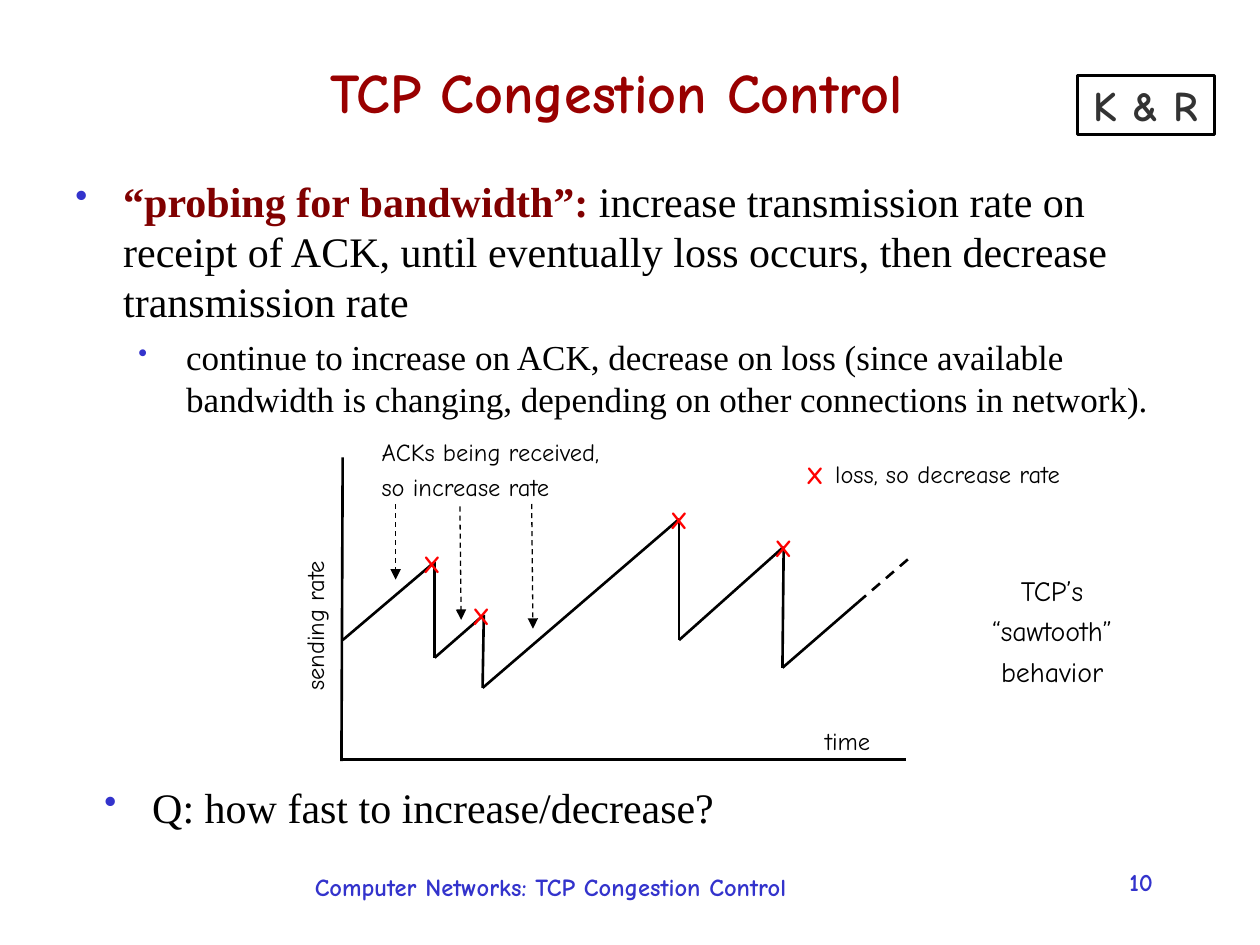
from dataclasses import dataclass
from itertools import pairwise

from lxml import etree
from pptx import Presentation
from pptx.dml.color import RGBColor
from pptx.enum.dml import MSO_LINE
from pptx.enum.shapes import MSO_CONNECTOR, MSO_SHAPE
from pptx.enum.text import MSO_ANCHOR, MSO_AUTO_SIZE, PP_ALIGN
from pptx.oxml.ns import qn
from pptx.util import Emu, Pt

PX_PER_INCH = 100
SCALE = 914400 // PX_PER_INCH

HAND = "Comic Neue"
SERIF = "Times New Roman"
BLACK, BLUE, RED = "000000", "3333CC", "FF0000"
TITLE_RED, MAROON, GRAY = "990000", "800000", "333333"
LEFT, CENTER, RIGHT = PP_ALIGN.LEFT, PP_ALIGN.CENTER, PP_ALIGN.RIGHT
BULLET_INDENT = 38
MARK_SIZE = 34, 33

Point = tuple[int, int]
Box = tuple[int, int, int, int]


@dataclass(frozen=True)
class Run:
    text: str
    size: int
    color: str = BLACK
    bold: bool = False
    font: str = HAND


@dataclass(frozen=True)
class Paragraph:
    runs: tuple[Run, ...]
    align: PP_ALIGN = LEFT
    level: int = 0
    bullet_percent: int = 0


@dataclass(frozen=True)
class Label:
    box: Box
    paragraphs: tuple[Paragraph, ...]
    wrap: bool = False
    rotation: int = 0
    anchor: MSO_ANCHOR = MSO_ANCHOR.TOP
    top_inset: int = 5


def px(length: int) -> Emu:
    return Emu(length * SCALE)


def rgb(color: str) -> RGBColor:
    return RGBColor.from_string(color)


def lines(*texts: str, size: int, align: PP_ALIGN = LEFT,
          color: str = BLACK, bold: bool = False) -> tuple[Paragraph, ...]:
    return tuple(Paragraph((Run(text, size, color, bold),), align) for text in texts)


def add_bullet(paragraph, level: int, percent: int) -> None:
    properties = paragraph._p.get_or_add_pPr()
    properties.set("marL", str(px(BULLET_INDENT + 50 * level)))
    properties.set("indent", str(-px(BULLET_INDENT)))
    bullet_color = etree.SubElement(properties, qn("a:buClr"))
    etree.SubElement(bullet_color, qn("a:srgbClr"), val=BLUE)
    etree.SubElement(properties, qn("a:buSzPct"), val=str(percent * 1000))
    etree.SubElement(properties, qn("a:buChar"), char="•")


def write(frame, paragraphs: tuple[Paragraph, ...]) -> None:
    for index, content in enumerate(paragraphs):
        paragraph = frame.add_paragraph() if index else frame.paragraphs[0]
        paragraph.alignment = content.align
        paragraph.level = content.level
        paragraph.space_before = Pt(round(0.24 * content.runs[0].size) if index else 0)
        if content.bullet_percent:
            add_bullet(paragraph, content.level, content.bullet_percent)
        for part in content.runs:
            run = paragraph.add_run()
            run.text = part.text
            run.font.name = part.font
            run.font.size = Pt(part.size)
            run.font.bold = part.bold
            run.font.color.rgb = rgb(part.color)


def draw_label(shapes, label: Label) -> None:
    textbox = shapes.add_textbox(*map(px, label.box))
    textbox.rotation = label.rotation
    frame = textbox.text_frame
    frame.word_wrap = label.wrap
    frame.auto_size = MSO_AUTO_SIZE.NONE if label.wrap else MSO_AUTO_SIZE.SHAPE_TO_FIT_TEXT
    frame.vertical_anchor = label.anchor
    frame.margin_top = px(label.top_inset)
    write(frame, label.paragraphs)


def draw_line(shapes, start: Point, end: Point, width: float = 1.5,
              dashed: bool = False, arrow: bool = False) -> None:
    connector = shapes.add_connector(MSO_CONNECTOR.STRAIGHT, *map(px, start + end))
    connector.line.color.rgb = rgb(BLACK)
    connector.line.width = Pt(width)
    if dashed:
        connector.line.dash_style = MSO_LINE.DASH
    if arrow:
        etree.SubElement(connector.line._ln, qn("a:tailEnd"), type="triangle")
    etree.SubElement(connector._element.spPr, qn("a:effectLst"))


def draw_credit(shapes, box: Box) -> None:
    credit = shapes.add_shape(MSO_SHAPE.RECTANGLE, *map(px, box))
    credit.shadow.inherit = False
    credit.fill.background()
    credit.line.color.rgb = rgb(BLACK)
    credit.line.width = Pt(2)
    credit.text_frame.word_wrap = False
    credit.text_frame.vertical_anchor = MSO_ANCHOR.MIDDLE
    write(credit.text_frame, lines("K & R", size=24, align=CENTER, color=GRAY, bold=True))


def loss_mark(left: int, top: int) -> Label:
    return Label((left, top, *MARK_SIZE),
                 lines("X", size=14, align=CENTER, color=RED, bold=True))


TITLE = Label((27, 14, 925, 117),
              lines("TCP Congestion Control", size=32, align=CENTER,
                    color=TITLE_RED, bold=True),
              wrap=True, anchor=MSO_ANCHOR.MIDDLE)
PROBING = Label((50, 130, 900, 158), (
    Paragraph((
        Run("“probing for bandwidth”: ", 24, MAROON, True, SERIF),
        Run("increase transmission rate on receipt of ACK, until eventually loss "
            "occurs, then decrease transmission rate", 24, font=SERIF),
    ), bullet_percent=85),
    Paragraph((
        Run("continue to increase on ACK, decrease on loss (since available bandwidth "
            "is changing, depending on other connections in network).", 20, font=SERIF),
    ), level=1, bullet_percent=75),
), wrap=True, top_inset=9)
QUESTION = Label((73, 611, 900, 63), (
    Paragraph((Run("Q: how fast to increase/decrease?", 24, font=SERIF),),
              bullet_percent=85),
), wrap=True, top_inset=9)
FOOTER = Label((240, 687, 543, 42),
               lines("Computer Networks: TCP Congestion Control", size=14,
                     color=BLUE, bold=True), wrap=True)
PAGE_NUMBER = Label((775, 683, 150, 50),
                    lines("10", size=14, align=RIGHT, color=BLUE, bold=True), wrap=True)

CHART_LABELS = (
    Label((293, 342, 215, 57), lines("ACKs being received,", "so increase rate", size=14)),
    Label((183, 475, 133, 33), lines("sending rate", size=14), rotation=270),
    Label((645, 571, 60, 33), lines("time", size=14)),
    Label((769, 450, 132, 90),
          lines("TCP’s", "“sawtooth”", "behavior", size=16, align=CENTER)),
)
LEGEND = (
    loss_mark(630, 360),
    Label((653, 359, 218, 33), lines("loss, so decrease rate", size=14)),
)
AXES = (((272, 363), (271, 604)), ((270, 603), (719, 603)))
SAWTOOTH = ((272, 508), (345, 446), (345, 522), (384, 488), (383, 546),
            (539, 412), (539, 508), (622, 434), (621, 530), (681, 478))
FORECAST_END = (724, 441)
ACK_ARROWS = (((314, 400), (314, 460)), ((365, 402), (366, 492)), ((422, 400), (423, 499)))
LOSSES = ((326, 431), (365, 472), (522, 396), (605, 418))


def main() -> None:
    presentation = Presentation()
    presentation.slide_width = px(1000)
    presentation.slide_height = px(750)
    shapes = presentation.slides.add_slide(presentation.slide_layouts[6]).shapes

    draw_label(shapes, TITLE)
    draw_label(shapes, PROBING)
    for start, end in (*AXES, *pairwise(SAWTOOTH)):
        draw_line(shapes, start, end)
    draw_line(shapes, SAWTOOTH[-1], FORECAST_END, dashed=True)
    for start, end in ACK_ARROWS:
        draw_line(shapes, start, end, width=0.75, dashed=True, arrow=True)
    for left, top in LOSSES:
        draw_label(shapes, loss_mark(left, top))
    legend_shapes = shapes.add_group_shape().shapes
    for label in LEGEND:
        draw_label(legend_shapes, label)
    for label in (*CHART_LABELS, QUESTION, FOOTER, PAGE_NUMBER):
        draw_label(shapes, label)
    draw_credit(shapes, (855, 60, 109, 47))

    presentation.save("out.pptx")


if __name__ == "__main__":
    main()
